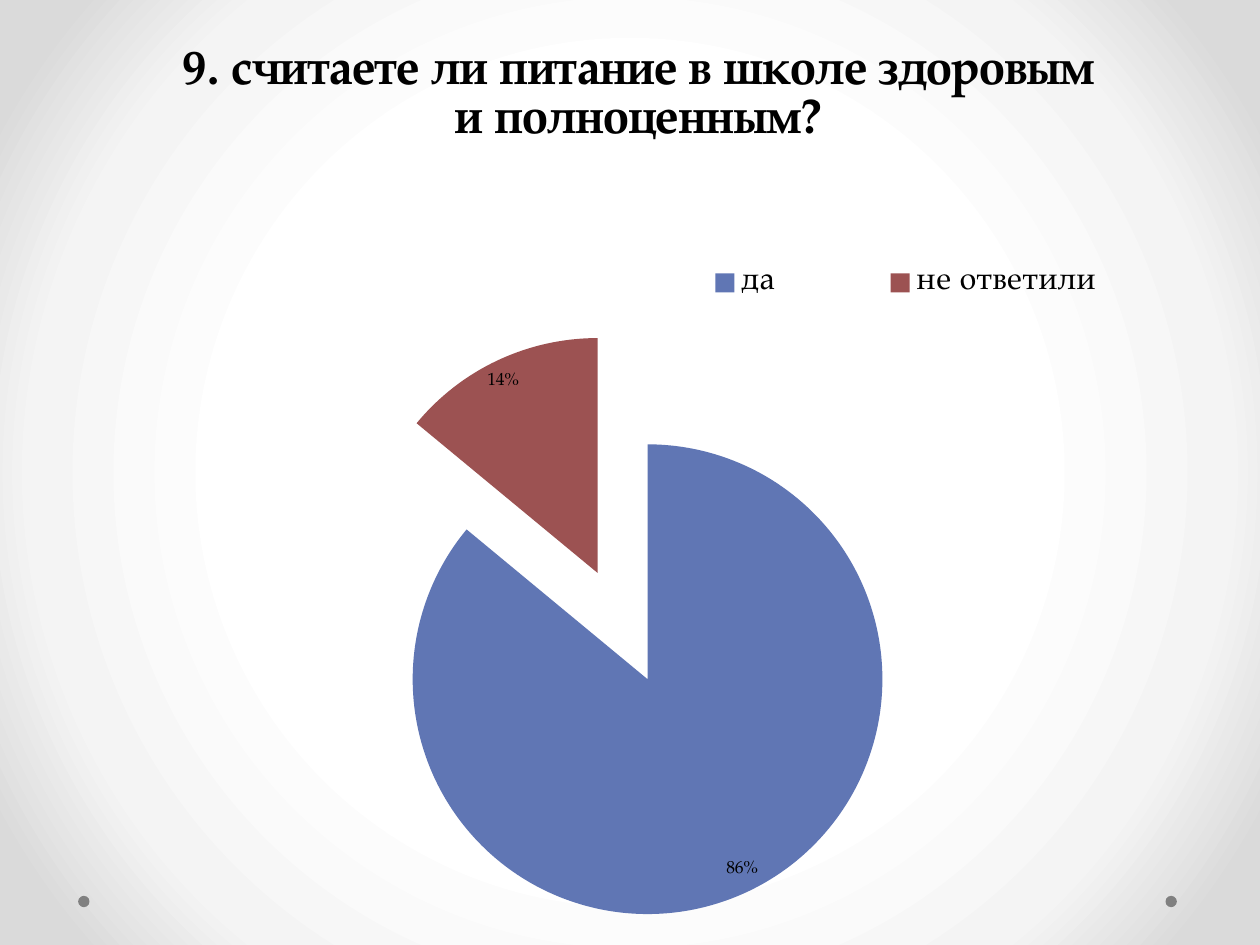
from lxml import etree
from pptx import Presentation
from pptx import util as u
from pptx.chart.data import CategoryChartData
from pptx.dml.color import RGBColor
from pptx.enum import chart as ch, shapes
from pptx.oxml import parse_xml
from pptx.oxml.ns import nsdecls, qn

COLORS = {"text": "000000", "dot": "808080", "yes": "6076B4", "no_answer": "9C5252"}
STOPS = [(50, "FFFFFF"), (76, "F4F4F4"), (92, "DADADA")]
FONT = "TeX Gyre Pagella"


def style(font, size):
    font.name = FONT
    font.size = u.Pt(size)
    font.color.rgb = RGBColor.from_string(COLORS["text"])


def place(part, index, target=None, **shares):
    """Give a chart part a manual layout, in shares of the chart's size."""
    for old in part.findall(qn("c:layout")):
        part.remove(old)
    layout = etree.Element(qn("c:layout"))
    manual = etree.SubElement(layout, qn("c:manualLayout"))
    if target:
        etree.SubElement(manual, qn("c:layoutTarget"), val=target)
    for mode in ("xMode", "yMode"):
        etree.SubElement(manual, qn(f"c:{mode}"), val="edge")
    for name, share in shares.items():
        etree.SubElement(manual, qn(f"c:{name}"), val=str(share))
    part.insert(index, layout)


deck = Presentation()
deck.slide_width, deck.slide_height = u.Inches(10), u.Inches(7.5)
page = deck.slides.add_slide(deck.slide_layouts[6])

# Radial background
stops = "".join(
    f'<a:gs pos="{share * 1000}"><a:srgbClr val="{color}"/></a:gs>' for share, color in STOPS
)
page.element.cSld.insert(0, parse_xml(
    f'<p:bg {nsdecls("p", "a")}><p:bgPr><a:gradFill rotWithShape="1"><a:gsLst>{stops}</a:gsLst>'
    '<a:path path="circle"><a:fillToRect l="50000" t="50000" r="50000" b="50000"/></a:path>'
    '</a:gradFill><a:effectLst/></p:bgPr></p:bg>'
))

# Corner dots
for left in (9.25, 0.62):
    dot = page.shapes.add_shape(
        shapes.MSO_SHAPE.OVAL, u.Inches(left), u.Inches(7.11), u.Inches(0.09), u.Inches(0.09)
    )
    dot.shadow.inherit = False
    dot.fill.solid()
    dot.fill.fore_color.rgb = RGBColor.from_string(COLORS["dot"])
    dot.line.fill.background()

# Pie chart of the answers
answers = CategoryChartData(number_format="0")
answers.categories = ["да", "не ответили"]
answers.add_series("Series 1", (86, 14))
chart = page.shapes.add_chart(
    ch.XL_CHART_TYPE.PIE, u.Inches(0.35), u.Inches(0.13), u.Inches(9.37), u.Inches(7.17), answers
).chart
style(chart.font, 10)
plot = chart.plots[0]
plot.vary_by_categories = True
series = plot.series[0]
for index, name in enumerate(("yes", "no_answer")):
    fill = series.points[index].format.fill
    fill.solid()
    fill.fore_color.rgb = RGBColor.from_string(COLORS[name])

# Pull every slice out from the centre
explosion = etree.Element(qn("c:explosion"), val="25")
series._element.find(qn("c:dPt")).addprevious(explosion)
place(chart._chartSpace.chart.plotArea, 0, "inner", x=0.07, y=0.35, w=0.84, h=0.65)

# Percent labels
plot.has_data_labels = True
labels = plot.data_labels
labels.show_percentage = True
labels.show_value = False
labels.number_format = "0%"
labels.number_format_is_linked = False
labels.position = ch.XL_LABEL_POSITION.BEST_FIT
style(labels.font, 10)

# Chart title
chart.has_title = True
para = chart.chart_title.text_frame.paragraphs[0]
para.text = "9. считаете ли питание в школе здоровым и полноценным?"
span = para.runs[0]
style(span.font, 28)
span.font.bold = True
place(chart.chart_title._element, 1, x=0.11, y=0.02)

# Legend
chart.has_legend = True
chart.legend.position = ch.XL_LEGEND_POSITION.TOP
chart.legend.include_in_layout = False
style(chart.legend.font, 18)
place(chart.legend._element, 1, x=0.48, y=0.26, w=0.5, h=0.07)

deck.save("out.pptx")
